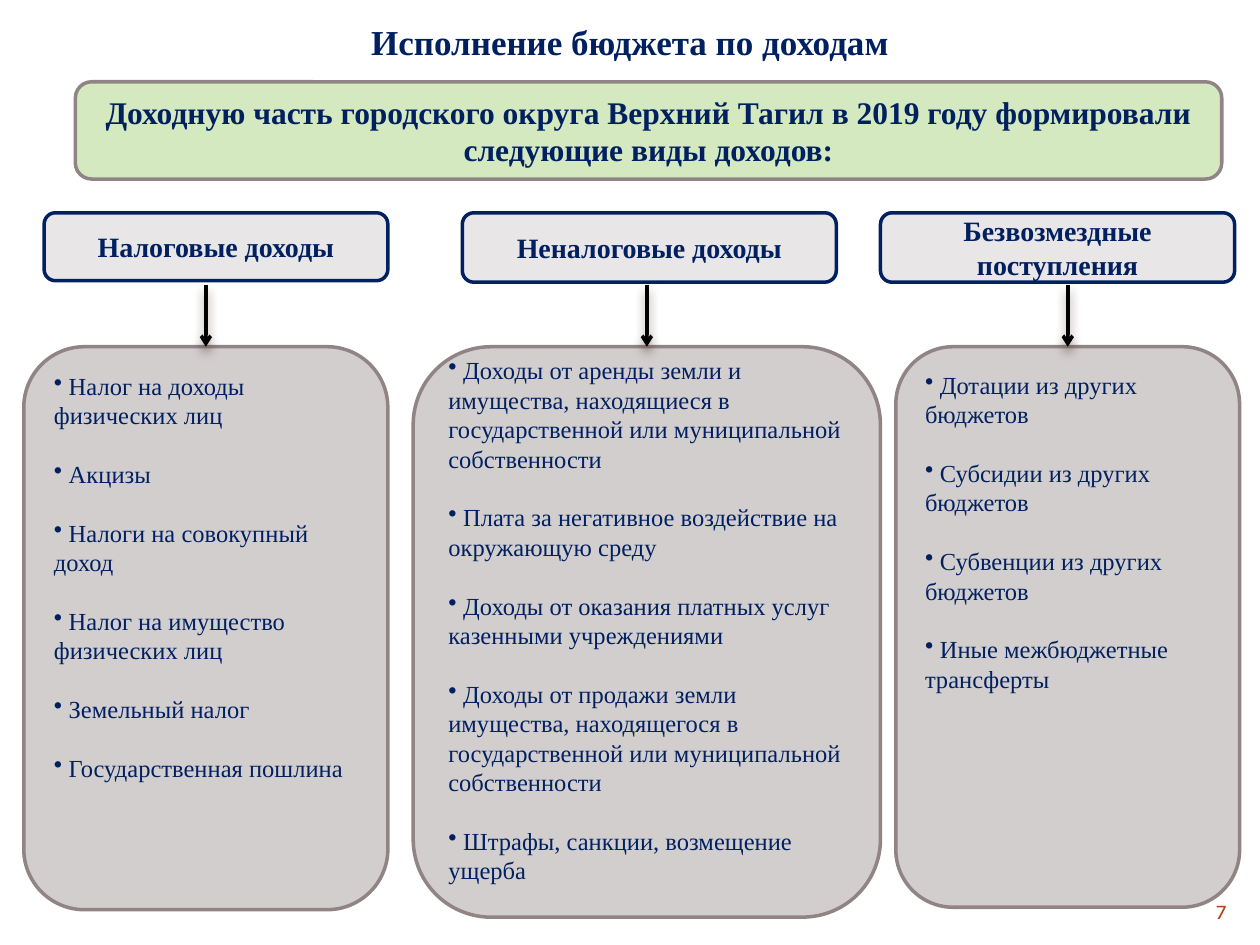
from dataclasses import dataclass
from typing import Any

import lxml.etree
import pptx
import pptx.dml.color
import pptx.enum.dml
import pptx.enum.shapes
import pptx.enum.text
import pptx.oxml
import pptx.oxml.ns
import pptx.util

Cm = pptx.util.Cm
Pt = pptx.util.Pt
RGBColor = pptx.dml.color.RGBColor
Align = pptx.enum.text.PP_ALIGN
Anchor = pptx.enum.text.MSO_ANCHOR
qn = pptx.oxml.ns.qn

NAVY = RGBColor(0x00, 0x20, 0x60)
BLACK = RGBColor(0x00, 0x00, 0x00)
BROWN = RGBColor(0x4E, 0x3B, 0x30)
RUST = RGBColor(0xBA, 0x40, 0x14)
GREEN = RGBColor(0xC2, 0xE1, 0xA5)
TAUPE = RGBColor(0x91, 0x84, 0x85)
PALE = RGBColor(0xE9, 0xE6, 0xE7)
STONE = RGBColor(0xD3, 0xCE, 0xCE)

SERIF = "Times New Roman"
TITLE_FONT = {"name": SERIF, "size": Pt(20), "bold": True}
BANNER_FONT = {"name": SERIF, "size": Pt(18), "bold": True}
HEADER_FONT = {"name": SERIF, "size": Pt(16), "bold": True}
ITEM_FONT = {"name": SERIF, "size": Pt(14), "bold": False}
NUMBER_FONT = {"name": "Karla", "size": Pt(12), "bold": False}

HEADER_TOP = 4.29
ARROW_TOP = 5.74
PANEL_TOP = 6.99


@dataclass
class Area:
    left: float
    top: float
    width: float
    height: float

    def lengths(self) -> list[Any]:
        return [Cm(side) for side in (self.left, self.top, self.width, self.height)]


@dataclass
class Column:
    heading: str
    header: Area
    panel: Area
    items: list[str]
    frame_format: dict[str, Any]


TOP_FORMAT = {"vertical_anchor": Anchor.TOP}
MIDDLE_FORMAT = {"vertical_anchor": Anchor.MIDDLE}

COLUMNS = [
    Column(
        "Налоговые доходы",
        Area(0.89, HEADER_TOP, 6.93, 1.37),
        Area(0.48, PANEL_TOP, 7.34, 11.35),
        [
            "Налог на доходы\vфизических лиц",
            "Акцизы",
            "Налоги на совокупный доход",
            "Налог на имущество физических лиц",
            "Земельный налог",
            "Государственная пошлина",
        ],
        TOP_FORMAT,
    ),
    Column(
        "Неналоговые доходы",
        Area(9.32, HEADER_TOP, 7.54, 1.4),
        Area(8.33, PANEL_TOP, 9.42, 11.5),
        [
            "Доходы от аренды земли и имущества, находящиеся в "
            "государственной или муниципальной собственности",
            "Плата за негативное воздействие на окружающую среду",
            "Доходы от оказания платных услуг казенными учреждениями",
            "Доходы от продажи земли имущества, находящегося в "
            "государственной или муниципальной собственности",
            "Штрафы, санкции, возмещение ущерба",
        ],
        MIDDLE_FORMAT | {"margin_bottom": Cm(0.6)},
    ),
    Column(
        "Безвозмездные поступления",
        Area(17.75, HEADER_TOP, 7.14, 1.4),
        Area(18.06, PANEL_TOP, 6.93, 11.3),
        [
            "Дотации из других бюджетов",
            "Субсидии из других бюджетов",
            "Субвенции из других бюджетов",
            "Иные межбюджетные трансферты",
        ],
        TOP_FORMAT,
    ),
]


def apply_format(target: Any, values: dict[str, Any]) -> None:
    for name, value in values.items():
        setattr(target, name, value)


def write_paragraph(para: Any, text: str, font: dict[str, Any], color: RGBColor, align: Any) -> None:
    para.alignment = align
    para.text = text
    for span in para.runs:
        apply_format(span.font, font)
        span.font.color.rgb = color


def add_label(page: Any, area: Area, text: str, font: dict[str, Any], color: RGBColor,
              align: Any, frame_format: dict[str, Any]) -> None:
    box = page.shapes.add_textbox(*area.lengths())
    apply_format(box.text_frame, {"word_wrap": True} | frame_format)
    write_paragraph(box.text_frame.paragraphs[0], text, font, color, align)


def add_block(page: Any, area: Area, fill: RGBColor, border: RGBColor,
              frame_format: dict[str, Any]) -> Any:
    block = page.shapes.add_shape(
        pptx.enum.shapes.MSO_SHAPE.ROUNDED_RECTANGLE, *area.lengths())
    block.shadow.inherit = False
    block.fill.solid()
    block.fill.fore_color.rgb = fill
    block.line.color.rgb = border
    block.line.width = Pt(2)
    apply_format(block.text_frame, {"word_wrap": True} | frame_format)
    return block


def add_heading(page: Any, area: Area, text: str, fill: RGBColor, border: RGBColor,
                font: dict[str, Any]) -> Any:
    block = add_block(page, area, fill, border, MIDDLE_FORMAT)
    write_paragraph(block.text_frame.paragraphs[0], text, font, NAVY, Align.CENTER)
    return block


def add_panel(page: Any, column: Column) -> Any:
    panel = add_block(page, column.panel, STONE, TAUPE, column.frame_format)
    frame = panel.text_frame
    for index, item in enumerate(column.items):
        para = frame.paragraphs[0] if index == 0 else frame.add_paragraph()
        write_paragraph(para, " " + item, ITEM_FONT, NAVY, Align.LEFT)
        if index:
            para.space_before = Pt(16.8)
        bullet = lxml.etree.SubElement(para._p.get_or_add_pPr(), qn("a:buChar"))
        bullet.set("char", "•")
    return panel


def add_arrow(page: Any, panel: Any) -> None:
    middle = panel.left + panel.width // 2
    arrow = page.shapes.add_connector(
        pptx.enum.shapes.MSO_CONNECTOR.STRAIGHT, middle, Cm(ARROW_TOP), middle, panel.top)
    arrow.end_connect(panel, 0)
    arrow.line.color.rgb = BLACK
    arrow.line.width = Pt(2)
    lxml.etree.SubElement(arrow.line._get_or_add_ln(), qn("a:tailEnd")).set("type", "arrow")
    effects = lxml.etree.SubElement(arrow._element.spPr, qn("a:effectLst"))
    shadow = lxml.etree.SubElement(
        effects, qn("a:outerShdw"), blurRad=str(Pt(6)), dist=str(Pt(4)),
        dir="5400000", rotWithShape="0")
    tint = lxml.etree.SubElement(shadow, qn("a:srgbClr"), val=str(BROWN))
    lxml.etree.SubElement(tint, qn("a:alpha"), val="60000")


def main() -> None:
    deck = pptx.Presentation()
    deck.slide_width, deck.slide_height = Cm(25.4), Cm(19.05)
    page = deck.slides.add_slide(deck.slide_layouts[6])

    add_label(page, Area(22.86, 17.98, 2.11, 0.69), "7", NUMBER_FONT, RUST, Align.RIGHT, {})
    sides = ("margin_left", "margin_top", "margin_right", "margin_bottom")
    add_label(page, Area(0, 0, 25.4, 1.65), "Исполнение бюджета по доходам",
              TITLE_FONT, NAVY, Align.CENTER, dict.fromkeys(sides, Cm(0.41)))

    banner = add_heading(
        page, Area(1.52, 1.65, 23.11, 1.96),
        "Доходную часть городского округа Верхний Тагил в 2019 году формировали "
        "следующие виды доходов:", GREEN, TAUPE, BANNER_FONT)
    tint = banner._element.spPr.find(qn("a:solidFill"))[0]
    lxml.etree.SubElement(tint, qn("a:alpha"), val="70000")

    for column in COLUMNS:
        add_heading(page, column.header, column.heading, PALE, NAVY, HEADER_FONT)
    panels = [add_panel(page, column) for column in COLUMNS]
    for panel in panels:
        add_arrow(page, panel)

    deck.save("out.pptx")


if __name__ == "__main__":
    main()
